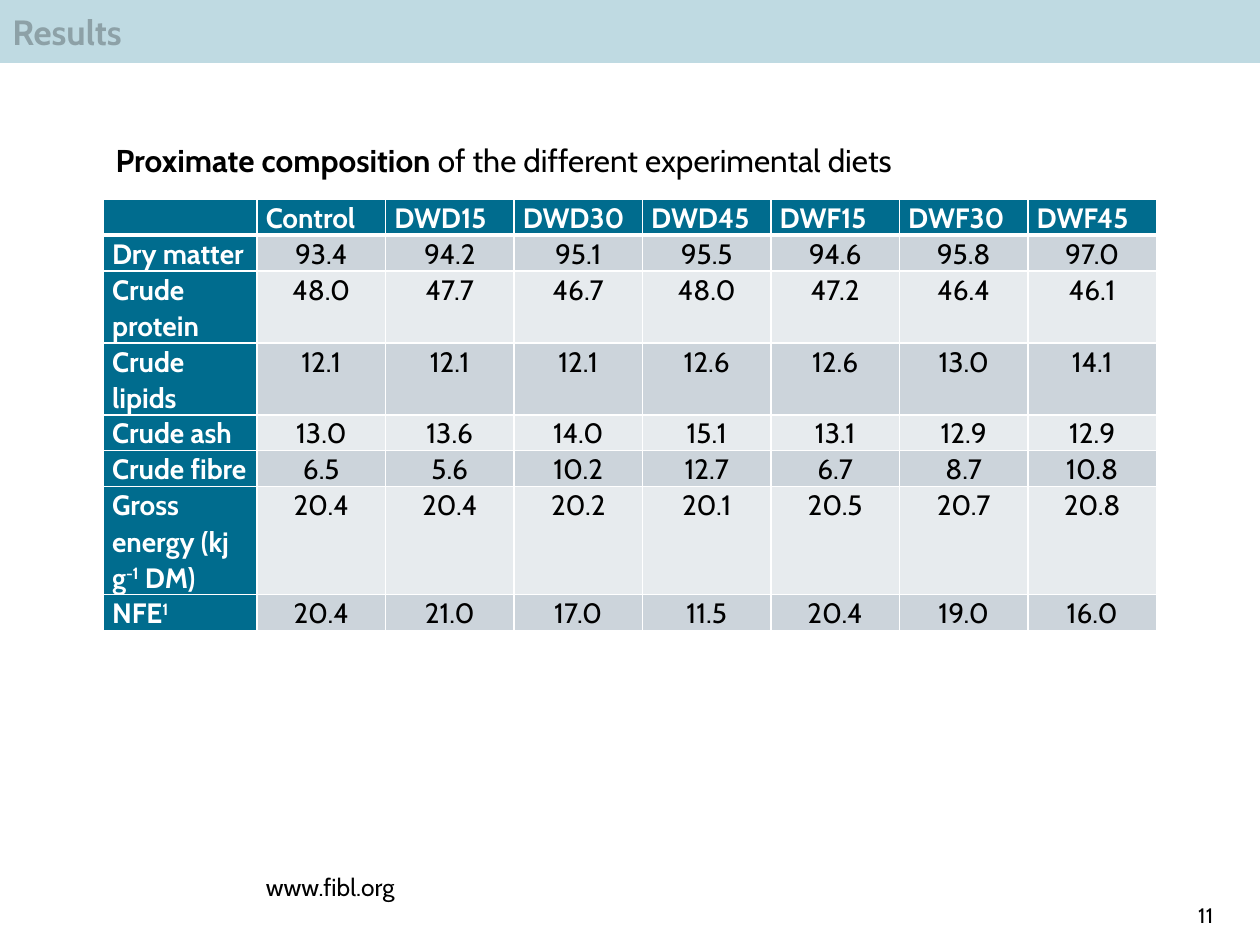
from dataclasses import dataclass, field

from lxml import etree
from pptx import Presentation
from pptx import util as u
from pptx.dml.color import RGBColor
from pptx.enum import shapes, text
from pptx.oxml import ns

TEAL = RGBColor(0x00, 0x6C, 0x8E)
BAND_DARK = RGBColor(0xCC, 0xD4, 0xDB)
BAND_LIGHT = RGBColor(0xE7, 0xEB, 0xEE)
WHITE = RGBColor(0xFF, 0xFF, 0xFF)
BLACK = RGBColor(0x00, 0x00, 0x00)

FONT = "Cabin"
GRID = u.Inches(0.1)  # the slide is 100 columns by 75 rows
TEXT_LINE = u.Inches(0.28)


@dataclass
class Box:
    column: float
    row: float
    columns: float
    rows: float

    def lengths(self) -> list[int]:
        return [int(n * GRID) for n in (self.column, self.row, self.columns, self.rows)]


@dataclass
class Span:
    """A stretch of text; extra holds raw run attributes."""
    content: str
    bold: bool = False
    extra: dict[str, str] = field(default_factory=dict)


@dataclass
class Diet:
    """One table row: its label, the lines the label takes, and the values."""
    label: list[Span]
    lines: int
    values: str


SUPERSCRIPT = {"baseline": "30000"}
HEADINGS = "Control DWD15 DWD30 DWD45 DWF15 DWF30 DWF45"
ROWS = [
    Diet([Span("Dry matter", True)], 1, "93.4 94.2 95.1 95.5 94.6 95.8 97.0"),
    Diet([Span("Crude protein", True)], 2, "48.0 47.7 46.7 48.0 47.2 46.4 46.1"),
    Diet([Span("Crude lipids", True)], 2, "12.1 12.1 12.1 12.6 12.6 13.0 14.1"),
    Diet([Span("Crude ash", True)], 1, "13.0 13.6 14.0 15.1 13.1 12.9 12.9"),
    Diet([Span("Crude fibre", True)], 1, "6.5 5.6 10.2 12.7 6.7 8.7 10.8"),
    Diet([Span("Gross energy (kj g", True), Span("-1", True, SUPERSCRIPT),
          Span(" DM)", True)], 3, "20.4 20.4 20.2 20.1 20.5 20.7 20.8"),
    Diet([Span("NFE", True), Span("1", True, SUPERSCRIPT)], 1,
         "20.4 21.0 17.0 11.5 20.4 19.0 16.0"),
]


def apply(target, formats: dict) -> None:
    for name, value in formats.items():
        setattr(target, name, value)


def make_translucent(element, percent: int) -> None:
    color = next(element.iter(ns.qn("a:srgbClr")))
    etree.SubElement(color, ns.qn("a:alpha")).set("val", str(percent * 1000))


def write(paragraph, spans: list[Span], size: float, color: RGBColor = BLACK) -> None:
    for span in spans:
        run = paragraph.add_run()
        run.text = span.content
        apply(run.font, {"name": FONT, "size": u.Pt(size), "bold": span.bold})
        run.font.color.rgb = color
        for name, value in span.extra.items():
            run._r.get_or_add_rPr().set(name, value)


def add_text(slide, box: Box, spans: list[Span], size: float,
             frame_format: dict, align=text.PP_ALIGN.LEFT) -> None:
    frame = slide.shapes.add_textbox(*box.lengths()).text_frame
    apply(frame, {"word_wrap": True, **frame_format})
    frame.paragraphs[0].alignment = align
    write(frame.paragraphs[0], spans, size)


def add_title_band(slide) -> None:
    band = slide.shapes.add_shape(shapes.MSO_SHAPE.RECTANGLE, *Box(0, 0, 100, 5).lengths())
    band.shadow.inherit = False
    band.fill.solid()
    band.fill.fore_color.rgb = TEAL
    make_translucent(band._element.spPr, 25)
    band.line.fill.background()
    band.text_frame.vertical_anchor = text.MSO_ANCHOR.MIDDLE
    paragraph = band.text_frame.paragraphs[0]
    paragraph.alignment = text.PP_ALIGN.LEFT
    write(paragraph, [Span("Results", True)], 20)
    make_translucent(paragraph._p, 25)


def set_borders(cell, widths: dict[str, float]) -> None:
    properties = cell._tc.get_or_add_tcPr()
    for side, width in widths.items():
        line = etree.SubElement(properties, ns.qn(f"a:ln{side}"), w=str(u.Pt(width)))
        fill = etree.SubElement(line, ns.qn("a:solidFill"))
        etree.SubElement(fill, ns.qn("a:srgbClr"), val=str(WHITE))


def fill_cell(cell, spans: list[Span], fill: RGBColor, color: RGBColor,
              align, top: float, bottom: float) -> None:
    set_borders(cell, {"L": 1, "R": 1, "T": top, "B": bottom})
    cell.fill.solid()
    cell.fill.fore_color.rgb = fill
    apply(cell, {"margin_left": u.Inches(0.07), "margin_right": u.Inches(0.07),
                 "margin_top": 0, "margin_bottom": 0})
    paragraph = cell.text_frame.paragraphs[0]
    apply(paragraph, {"alignment": align, "line_spacing": 1.07})
    write(paragraph, spans, 16, color)
    if not spans:  # keeps the empty corner as low as its row
        end = etree.SubElement(paragraph._p, ns.qn("a:endParaRPr"), sz="1600")
        etree.SubElement(end, ns.qn("a:latin"), typeface=FONT)


def add_diet_table(slide) -> None:
    headings = HEADINGS.split()
    table = slide.shapes.add_table(len(ROWS) + 1, len(headings) + 1,
                                   *Box(8.2, 15.8, 83.6, 34).lengths()).table
    for index, column in enumerate(table.columns):
        column.width = u.Inches(1.02 if index else 1.22)
    for row, lines in zip(table.rows, [1] + [diet.lines for diet in ROWS]):
        row.height = lines * TEXT_LINE

    left, center = text.PP_ALIGN.LEFT, text.PP_ALIGN.CENTER
    # Heading row, with an empty corner
    for column, heading in enumerate([""] + headings):
        spans = [Span(heading, True)] if heading else []
        fill_cell(table.cell(0, column), spans, TEAL, WHITE, left, 1, 3)
    # Labels and banded values
    for row, diet in enumerate(ROWS, 1):
        top = 3 if row == 1 else 1
        band = BAND_DARK if row % 2 else BAND_LIGHT
        fill_cell(table.cell(row, 0), diet.label, TEAL, WHITE, left, top, 1)
        for column, value in enumerate(diet.values.split(), 1):
            fill_cell(table.cell(row, column), [Span(value)], band, BLACK, center, top, 1)


def main() -> None:
    presentation = Presentation()
    apply(presentation, {"slide_width": 100 * GRID, "slide_height": 75 * GRID})
    slide = presentation.slides.add_slide(presentation.slide_layouts[6])

    # Footer
    footer = {"margin_left": 0, "margin_right": 0,
              "vertical_anchor": text.MSO_ANCHOR.BOTTOM}
    add_text(slide, Box(21.1, 68.6, 29.9, 3.4), [Span("www.fibl.org")], 14, footer)
    add_text(slide, Box(90.7, 71, 5.6, 3.1), [Span("11", extra={"spc": "20"})], 12,
             footer, text.PP_ALIGN.RIGHT)

    # Title, table and its caption
    add_title_band(slide)
    add_diet_table(slide)
    add_text(slide, Box(8.2, 10.7, 65.3, 4),
             [Span("Proximate composition", True),
              Span(" of the different experimental diets")], 18, {})
    presentation.save("out.pptx")


if __name__ == "__main__":
    main()
